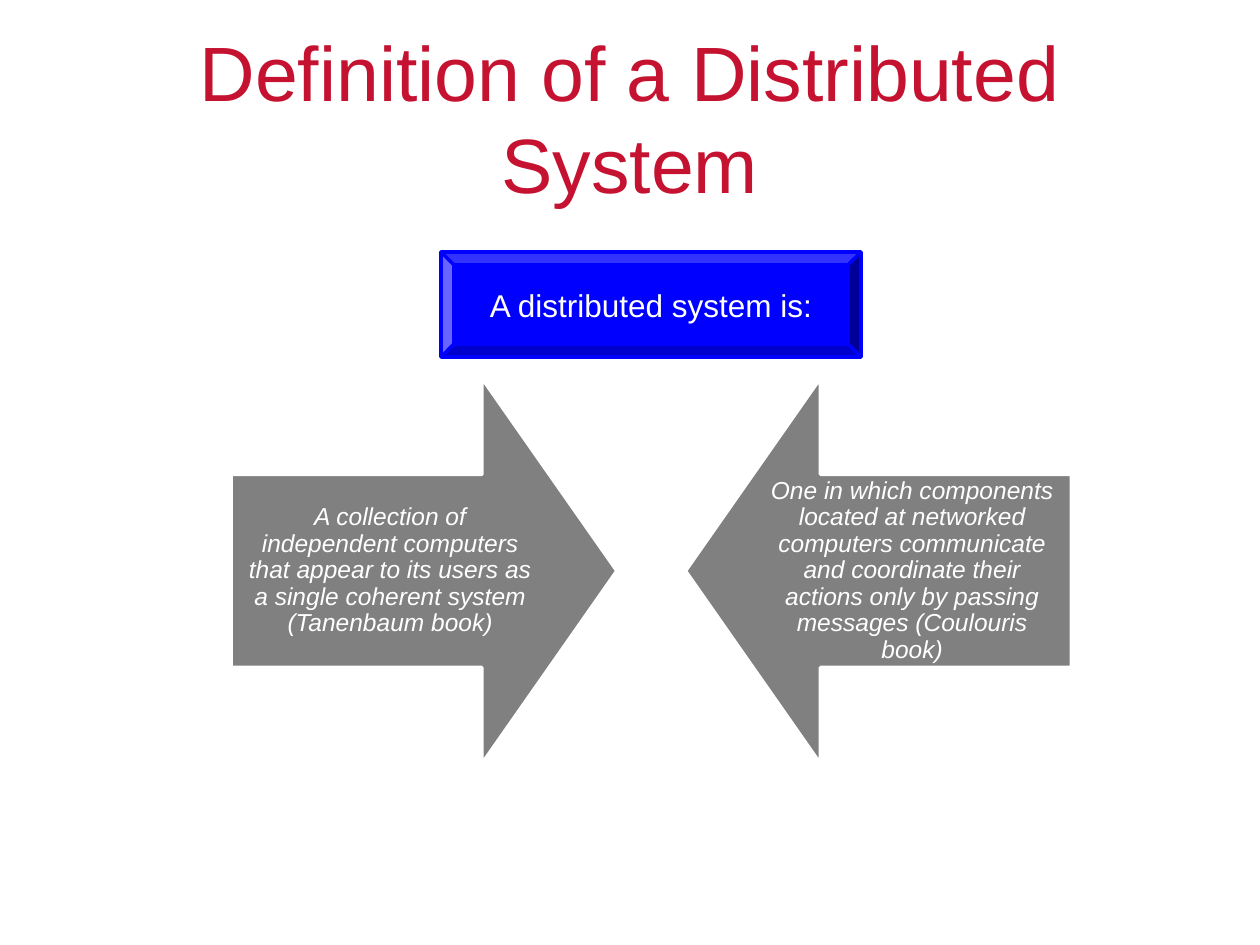
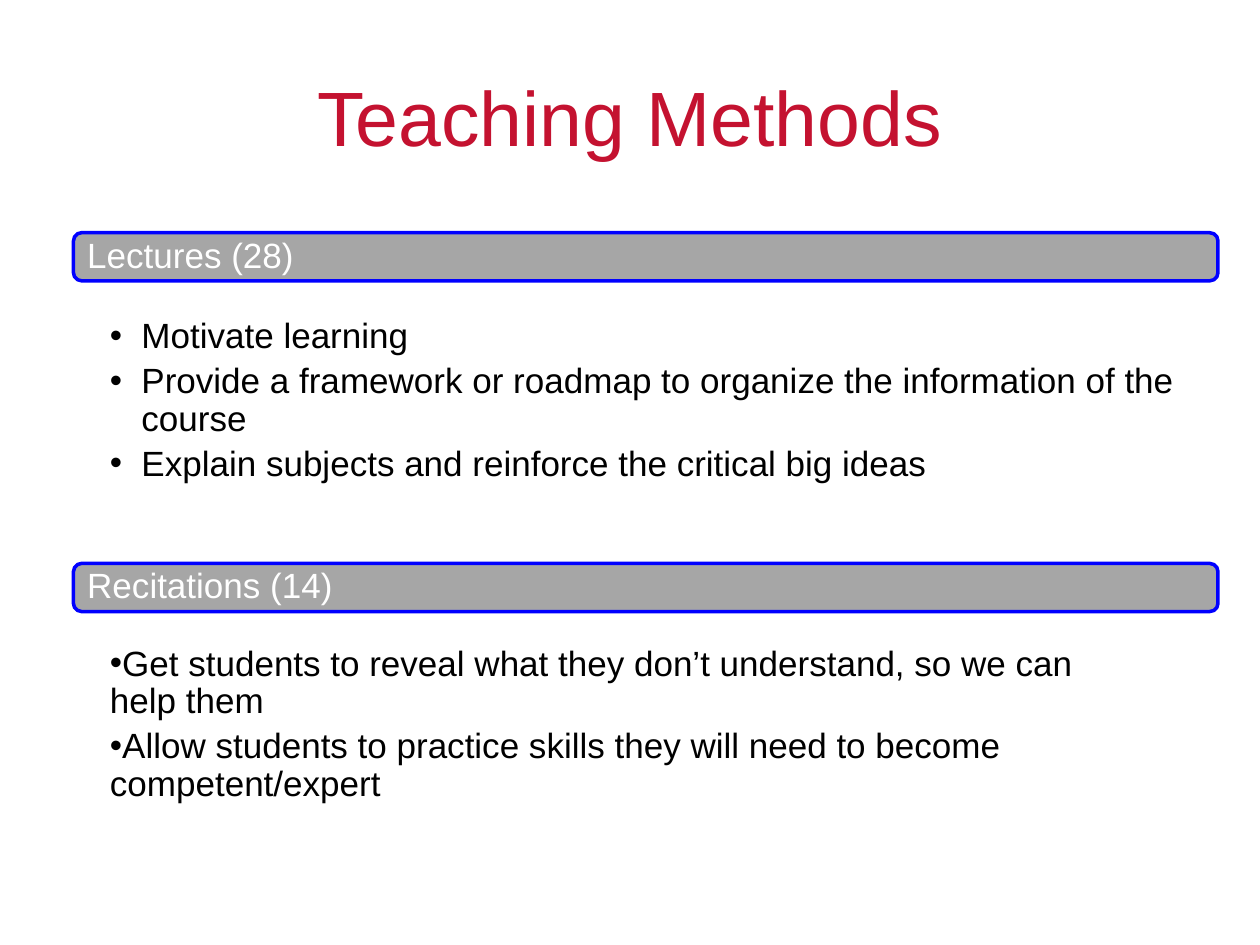
from pptx import Presentation
from pptx.dml.color import RGBColor
from pptx.enum import shapes, text
from pptx.util import Pt

FONT = "Arial"
RED = RGBColor(0xC4, 0x12, 0x30)
BLUE = RGBColor(0x00, 0x00, 0xFF)
GRAY = RGBColor(0x80, 0x80, 0x80)
LIGHT_GRAY = RGBColor(0xA6, 0xA6, 0xA6)
WHITE = RGBColor(0xFF, 0xFF, 0xFF)
BLACK = RGBColor(0x00, 0x00, 0x00)
MSO, ALIGN, ANCHOR = shapes.MSO_SHAPE, text.PP_ALIGN, text.MSO_ANCHOR


def write(sp, *lines, size, color=WHITE, italic=False, align=ALIGN.CENTER,
          anchor=ANCHOR.MIDDLE, spacing=1.0, after=0, hang=None,
          insets=(7.2, 3.6, 7.2, 3.6)):
    """Fill sp with one paragraph per line; hang is the bullet's hanging indent."""
    tf = sp.text_frame
    tf.word_wrap = True
    tf.auto_size = text.MSO_AUTO_SIZE.NONE
    tf.vertical_anchor = anchor
    tf.margin_left, tf.margin_top, tf.margin_right, tf.margin_bottom = map(Pt, insets)
    for i, line in enumerate(lines):
        p = tf.add_paragraph() if i else tf.paragraphs[0]
        p.text = line
        p.alignment = align
        p.line_spacing = spacing
        p.space_before, p.space_after = Pt(0), Pt(after)
        if hang is not None:
            pPr = p._p.get_or_add_pPr()
            pPr.set("marL", str(Pt(hang)))
            pPr.set("indent", str(-Pt(hang)))
        for r in p.runs:
            r.font.name, r.font.size = FONT, Pt(size)
            r.font.italic, r.font.color.rgb = italic, color


def add_box(s, kind, left, top, width, height, fill, line):
    sp = s.shapes.add_shape(kind, Pt(left), Pt(top), Pt(width), Pt(height))
    sp.shadow.inherit = False
    sp.fill.solid()
    sp.fill.fore_color.rgb = fill
    sp.line.color.rgb = line
    sp.line.width = Pt(2)
    return sp


prs = Presentation()
prs.slide_width, prs.slide_height = Pt(720), Pt(540)
TITLE_ONLY, TWO_CONTENT = prs.slide_layouts[5], prs.slide_layouts[3]

# Both slides with their titles
slides = []
for layout, title, top, height in (
    (TITLE_ONLY, "Definition of a Distributed System", 21.6, 90),
    (TWO_CONTENT, "Teaching Methods", 24.5, 83.5),
):
    s = prs.slides.add_slide(layout)
    sp = s.shapes.title
    sp.left, sp.top, sp.width, sp.height = Pt(36), Pt(top), Pt(648), Pt(height)
    write(sp, title, size=44, color=RED)
    slides.append(s)
definition, methods = slides

# Slide 1: heading and two arrows that point at each other
heading = add_box(definition, MSO.BEVEL, 252, 144, 240, 60, BLUE, BLUE)
write(heading, "A distributed system is:", size=18)

for kind, left, quote in (
    (MSO.RIGHT_ARROW, 132,
     "A collection of independent computers that appear to its users "
     "as a single coherent system (Tanenbaum book)"),
    (MSO.LEFT_ARROW, 391.7,
     "One in which components located at networked computers communicate and "
     "coordinate their actions only by passing messages (Coulouris book)"),
):
    arrow = add_box(definition, kind, left, 216, 220.5, 220.5, GRAY, WHITE)
    arrow.adjustments[0], arrow.adjustments[1] = 0.5, 0.35
    write(arrow, quote, size=14, italic=True, spacing=0.9,
          insets=(7.5, 7.2, 7.5, 7.2))

# Slide 2: bands, each with a list below it
for idx, band_top, band_text, list_top, hang, items in (
    (1, 133, "Lectures (28)", 182, 18, (
        "Motivate learning",
        "Provide a framework or roadmap to organize the information of the course",
        "Explain subjects and reinforce the critical big ideas")),
    (2, 322, "Recitations (14)", 369, 0, (
        "Get students to reveal what they don’t understand, so we can \vhelp them",
        "Allow students to practice skills they will need to become competent/expert")),
):
    band = add_box(methods, MSO.ROUNDED_RECTANGLE, 42, band_top, 654, 27.5,
                   LIGHT_GRAY, BLUE)
    band.adjustments[0] = 0.17
    write(band, band_text, size=20, align=ALIGN.LEFT, spacing=0.9,
          insets=(6.5, 0, 6.5, 0))
    body = methods.placeholders[idx]
    body.left, body.top, body.width, body.height = Pt(42), Pt(list_top), Pt(654), Pt(100)
    write(body, *items, size=20, color=BLACK, align=ALIGN.LEFT, anchor=ANCHOR.TOP,
          spacing=0.9, after=4, hang=hang, insets=(20.8, 0, 13.7, 0))

prs.save("out.pptx")
